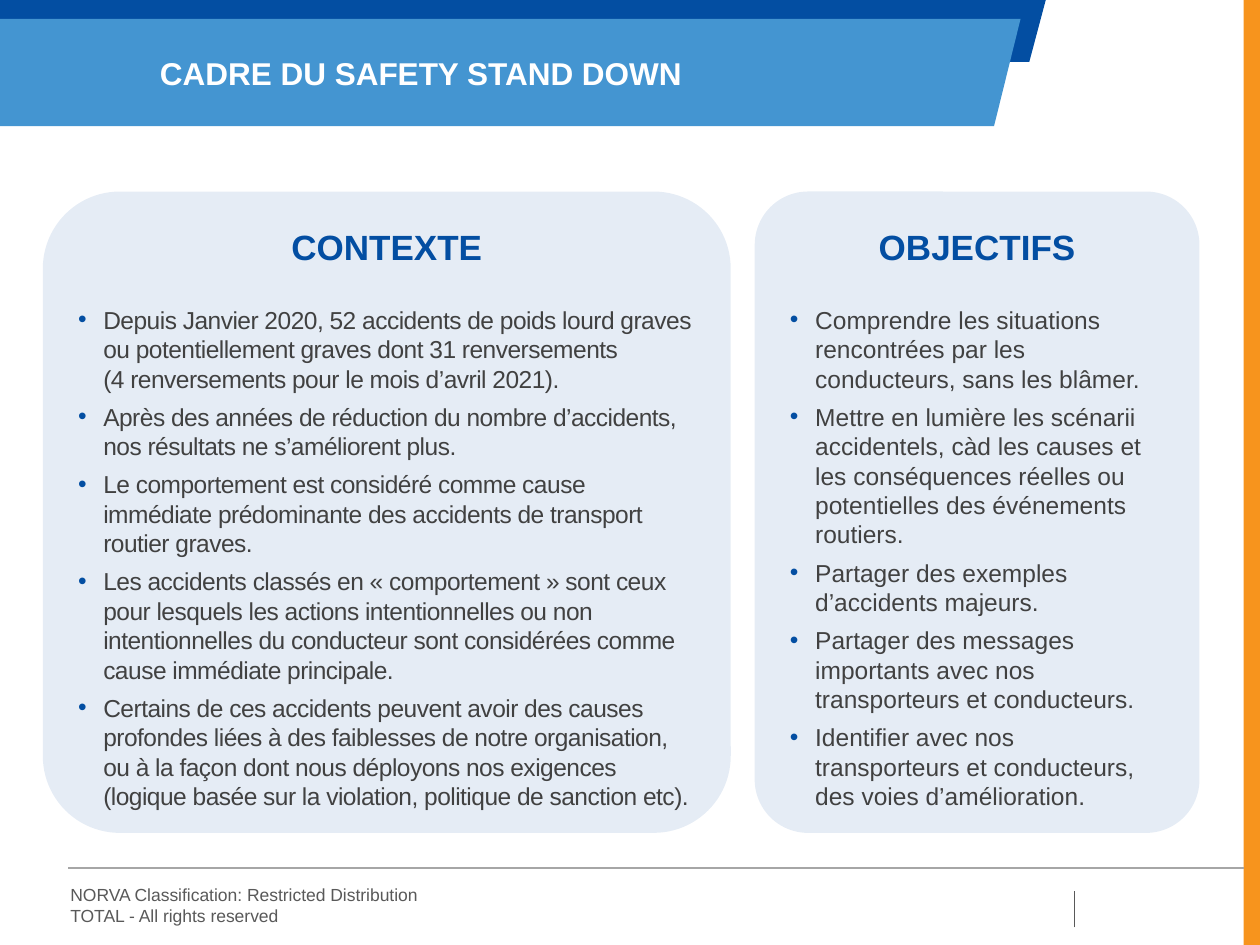
from copy import deepcopy
from lxml import etree
from pptx import Presentation
from pptx.dml import color
from pptx.enum import shapes, text
from pptx.oxml import ns
from pptx.util import Inches, Pt

TITLE = "CADRE DU SAFETY STAND DOWN"
FOOTER = ["NORVA Classification: Restricted Distribution", "TOTAL - All rights reserved"]
PANELS = [
    {
        "heading": "OBJECTIFS", "left": 5.99, "width": 3.53, "spacing": 0,
        "points": [
            "Comprendre les situations rencontrées par les conducteurs, sans les blâmer.",
            "Mettre en lumière les scénarii accidentels, càd les causes et les conséquences réelles ou potentielles des événements routiers.",
            "Partager des exemples d’accidents majeurs.",
            "Partager des messages importants avec nos transporteurs et conducteurs.",
            "Identifier avec nos transporteurs et conducteurs, des voies d’amélioration.",
        ],
    },
    {
        "heading": "CONTEXTE", "left": 0.34, "width": 5.46, "spacing": -30,
        "points": [
            "Depuis Janvier 2020, 52 accidents de poids lourd graves ou potentiellement graves dont 31 renversements \v(4 renversements pour le mois d’avril 2021).",
            "Après des années de réduction du nombre d’accidents, nos résultats ne s’améliorent plus.",
            "Le comportement est considéré comme cause immédiate prédominante des accidents de transport routier graves.",
            "Les accidents classés en « comportement » sont ceux pour lesquels les actions intentionnelles ou non intentionnelles du conducteur sont considérées comme cause immédiate principale.",
            "Certains de ces accidents peuvent avoir des causes profondes liées à des faiblesses de notre organisation, ou à la façon dont nous déployons nos exigences (logique basée sur la violation, politique de sanction etc).",
        ],
    },
]
BANNERS = [
    ("navy", [(0, 0), (8.3, 0), (8.17, 0.49), (0, 0.49)]),
    ("sky", [(0, 0.15), (8.1, 0.15), (7.89, 1), (0, 1)]),
]
RULES = [("rule", (0.54, 6.89), (9.87, 6.89)), ("footer", (8.53, 7.36), (8.53, 7.07))]

THEME = {
    "font": "Arial",
    "colors": {"navy": "034EA2", "sky": "4495D1", "orange": "F7941D", "white": "FFFFFF",
               "body": "414141", "footer": "595959", "rule": "A6A6A6"},
    "styles": {
        "title": {"size": Pt(18), "bold": True, "color": "white"},
        "heading": {"size": Pt(20), "bold": True, "color": "navy"},
        "body": {"size": Pt(14), "bold": False, "color": "body"},
        "footer": {"size": Pt(10), "bold": False, "color": "footer"},
    },
    "panel_alpha": 10,
}


def rgb(name):
    return color.RGBColor.from_string(THEME["colors"][name])


def paint(shape, name):
    shape.shadow.inherit = False
    shape.fill.solid()
    shape.fill.fore_color.rgb = rgb(name)
    shape.line.fill.background()


def add_child(parent, tag, **attributes):
    return etree.SubElement(parent, ns.qn(tag), attributes)


def add_banner(page, name, points):
    start, *others = [(Inches(x), Inches(y)) for x, y in points]
    builder = page.shapes.build_freeform(*start)
    builder.add_line_segments(others, close=True)
    paint(builder.convert_to_shape(), name)


def add_rule(page, name, start, end):
    ends = [Inches(value) for value in start + end]
    rule = page.shapes.add_connector(shapes.MSO_CONNECTOR.STRAIGHT, *ends)
    rule.line.color.rgb = rgb(name)
    rule.line.width = Pt(0.75)
    add_child(rule._element.spPr, "a:effectLst")


def add_text(page, area, lines, style, insets=(0.1, 0.05), spacing=0, bullets=False, **frame_format):
    box = page.shapes.add_textbox(*map(Inches, area))
    frame = box.text_frame
    across, down = map(Inches, insets)
    settings = {"word_wrap": True, "margin_left": across, "margin_right": across,
                "margin_top": down, "margin_bottom": down, **frame_format}
    for key, value in settings.items():
        setattr(frame, key, value)
    font_format = dict(THEME["styles"][style], name=THEME["font"])
    font_color = rgb(font_format.pop("color"))
    for index, line in enumerate(lines):
        para = frame.add_paragraph() if index else frame.paragraphs[0]
        para.text = line
        if bullets:
            if index:
                para.space_before = Pt(5)
            add_bullet(para)
        for span in para.runs:
            for key, value in font_format.items():
                setattr(span.font, key, value)
            span.font.color.rgb = font_color
            if spacing:
                span._r.get_or_add_rPr().set("spc", str(spacing))
        for line_break in para._p.findall(ns.qn("a:br")):
            line_break.append(deepcopy(para.runs[0]._r.rPr))
    return frame


def add_bullet(para):
    properties = para._p.get_or_add_pPr()
    properties.set("marL", str(Inches(0.2)))
    properties.set("indent", str(-Inches(0.2)))
    bullet_color = add_child(properties, "a:buClr")
    add_child(bullet_color, "a:srgbClr", val=THEME["colors"]["navy"])
    add_child(properties, "a:buFont", typeface=THEME["font"])
    add_child(properties, "a:buChar", char="•")


def add_panel(page, heading, left, width, spacing, points):
    area = [Inches(value) for value in (left, 1.52, width, 5.09)]
    panel = page.shapes.add_shape(shapes.MSO_SHAPE.ROUNDED_RECTANGLE, *area)
    panel.adjustments[0] = 0.12
    paint(panel, "navy")
    fill_color = panel._element.spPr.find(ns.qn("a:solidFill"))[0]
    add_child(fill_color, "a:alpha", val=str(THEME["panel_alpha"] * 1000))
    title = add_text(page, (left, 1.75, width, 0.42), [heading], "heading",
                     vertical_anchor=text.MSO_ANCHOR.MIDDLE)
    title.paragraphs[0].alignment = text.PP_ALIGN.CENTER
    add_text(page, (left, 2.37, width, 4.1), points, "body",
             insets=(0.28, 0.05), spacing=spacing, bullets=True)


def main():
    deck = Presentation()
    deck.slide_width, deck.slide_height = Inches(10), Inches(7.5)
    page = deck.slides.add_slide(deck.slide_layouts[6])
    edge = page.shapes.add_shape(shapes.MSO_SHAPE.RECTANGLE, Inches(9.87), 0,
                                 Inches(0.13), deck.slide_height)
    paint(edge, "orange")
    for rule in RULES:
        add_rule(page, *rule)
    add_text(page, (0.46, 6.97, 5.39, 0.44), FOOTER, "footer")
    for banner in BANNERS:
        add_banner(page, *banner)
    add_text(page, (1.27, 0.43, 6, 0.3), [TITLE], "title", insets=(0, 0))
    for panel in PANELS:
        add_panel(page, **panel)
    deck.save("out.pptx")


if __name__ == "__main__":
    main()
